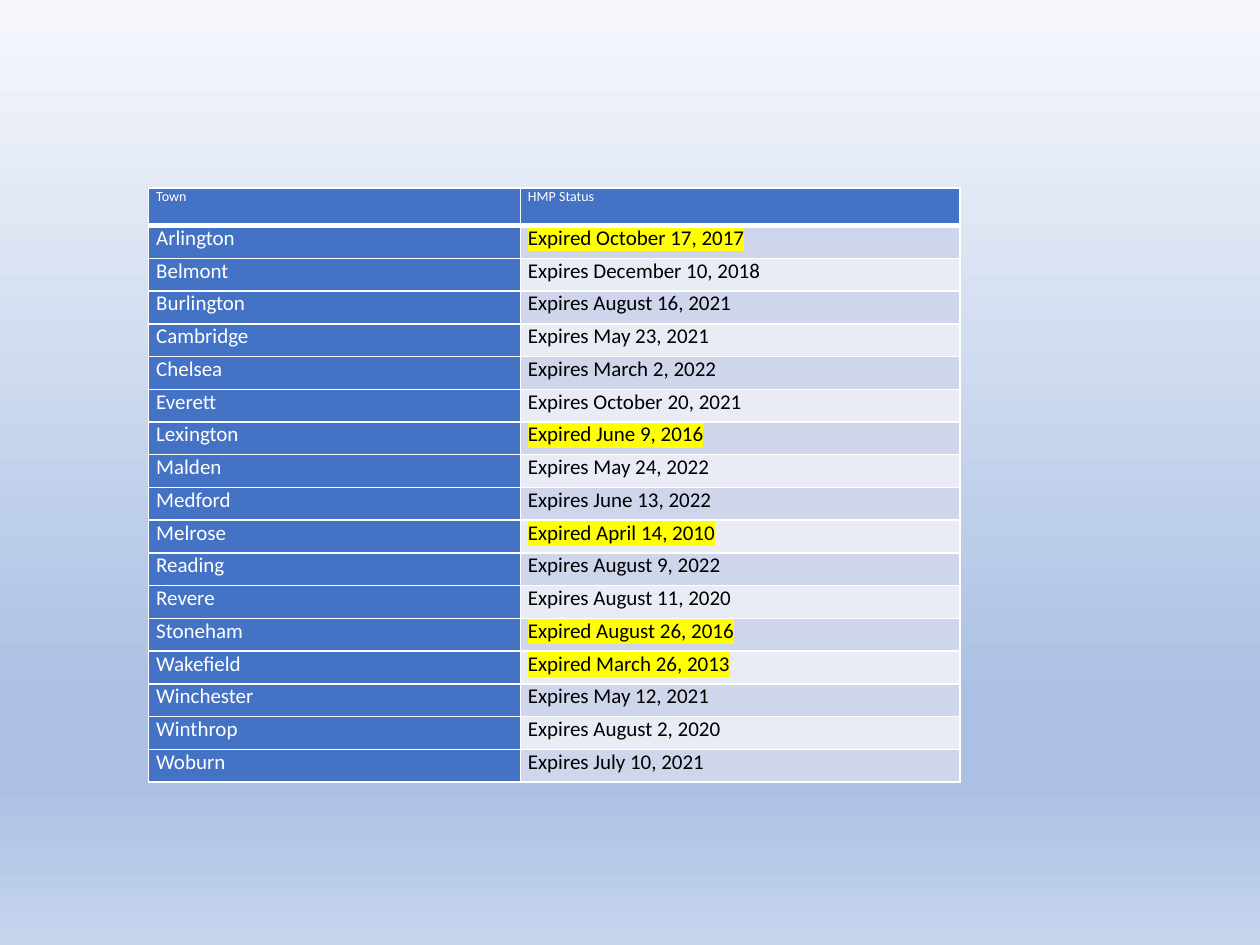
from dataclasses import dataclass

from lxml.etree import SubElement
from pptx import Presentation
from pptx.dml.color import RGBColor
from pptx.oxml.ns import qn
from pptx.table import _Cell
from pptx.util import Inches, Pt

BLUE, WHITE, BLACK, YELLOW = "4472C4", "FFFFFF", "000000", "FFFF00"
BANDS = ("CFD5EA", "E9EBF5")
BACKGROUND_STOPS = ((0, "F6F8FC"), (74, "ABC0E4"), (83, "ABC0E4"), (100, "C7D5ED"))
COLUMN_WIDTHS = (2.95, 3.49)
HEADER_HEIGHT, ROW_HEIGHT = 0.3, 0.26


@dataclass
class Plan:
    town: str
    status: str

    @property
    def expired(self) -> bool:
        return self.status.startswith("Expired")


PLANS = [
    Plan("Arlington", "Expired October 17, 2017"),
    Plan("Belmont", "Expires December 10, 2018"),
    Plan("Burlington", "Expires August 16, 2021"),
    Plan("Cambridge", "Expires May 23, 2021"),
    Plan("Chelsea", "Expires March 2, 2022"),
    Plan("Everett", "Expires October 20, 2021"),
    Plan("Lexington", "Expired June 9, 2016"),
    Plan("Malden", "Expires May 24, 2022"),
    Plan("Medford", "Expires June 13, 2022"),
    Plan("Melrose", "Expired April 14, 2010"),
    Plan("Reading", "Expires August 9, 2022"),
    Plan("Revere", "Expires August 11, 2020"),
    Plan("Stoneham", "Expired August 26, 2016"),
    Plan("Wakefield", "Expired March 26, 2013"),
    Plan("Winchester", "Expires May 12, 2021"),
    Plan("Winthrop", "Expires August 2, 2020"),
    Plan("Woburn", "Expires July 10, 2021"),
]


def color(value: str) -> RGBColor:
    return RGBColor.from_string(value)


def add_color(parent, value: str) -> None:
    SubElement(parent, qn("a:srgbClr"), val=value)


def paint_background(page) -> None:
    fill = page.background.fill
    fill.gradient()
    fill.gradient_angle = 270
    stops = page.element.find(".//" + qn("a:gsLst"))
    for stop in list(stops):
        stops.remove(stop)
    for percent, value in BACKGROUND_STOPS:
        add_color(SubElement(stops, qn("a:gs"), pos=str(percent * 1000)), value)


def add_borders(cell: _Cell, bottom: float) -> None:
    properties = cell._tc.get_or_add_tcPr()
    for side, width in (("L", 1), ("R", 1), ("T", 1), ("B", bottom)):
        line = SubElement(properties, qn(f"a:ln{side}"), w=str(Pt(width)))
        add_color(SubElement(line, qn("a:solidFill")), WHITE)


def write_cell(cell: _Cell, text: str, fill: str, text_color: str = WHITE,
               size: float = 12, bottom: float = 1, highlight: bool = False) -> None:
    add_borders(cell, bottom)
    cell.fill.solid()
    cell.fill.fore_color.rgb = color(fill)
    cell.margin_left = cell.margin_right = Inches(0.06)
    cell.margin_top = cell.margin_bottom = 0
    para = cell.text_frame.paragraphs[0]
    para.font.name = "Calibri"
    para.font.size = Pt(size)
    para.font.color.rgb = color(text_color)
    span = para.add_run()
    span.text = text
    if highlight:
        add_color(SubElement(span._r.get_or_add_rPr(), qn("a:highlight")), YELLOW)


def add_status_table(page) -> None:
    frame = page.shapes.add_table(
        len(PLANS) + 1, 2, Inches(1.18), Inches(1.49), Inches(sum(COLUMN_WIDTHS)),
        Inches(HEADER_HEIGHT + ROW_HEIGHT * len(PLANS)))
    table = frame.table
    table.first_row = table.horz_banding = False
    for column, width in zip(table.columns, COLUMN_WIDTHS):
        column.width = Inches(width)
    for index, row in enumerate(table.rows):
        row.height = Inches(ROW_HEIGHT if index else HEADER_HEIGHT)

    # Header row
    for index, heading in enumerate(("Town", "HMP Status")):
        write_cell(table.cell(0, index), heading, BLUE, size=8, bottom=3)

    # One row per town, expired plans highlighted
    for index, plan in enumerate(PLANS):
        write_cell(table.cell(index + 1, 0), plan.town, BLUE)
        write_cell(table.cell(index + 1, 1), plan.status, BANDS[index % 2], BLACK,
                   highlight=plan.expired)


def main() -> None:
    deck = Presentation()
    deck.slide_width, deck.slide_height = Inches(10), Inches(7.5)
    page = deck.slides.add_slide(deck.slide_layouts[6])
    paint_background(page)
    add_status_table(page)
    deck.save("out.pptx")


if __name__ == "__main__":
    main()
